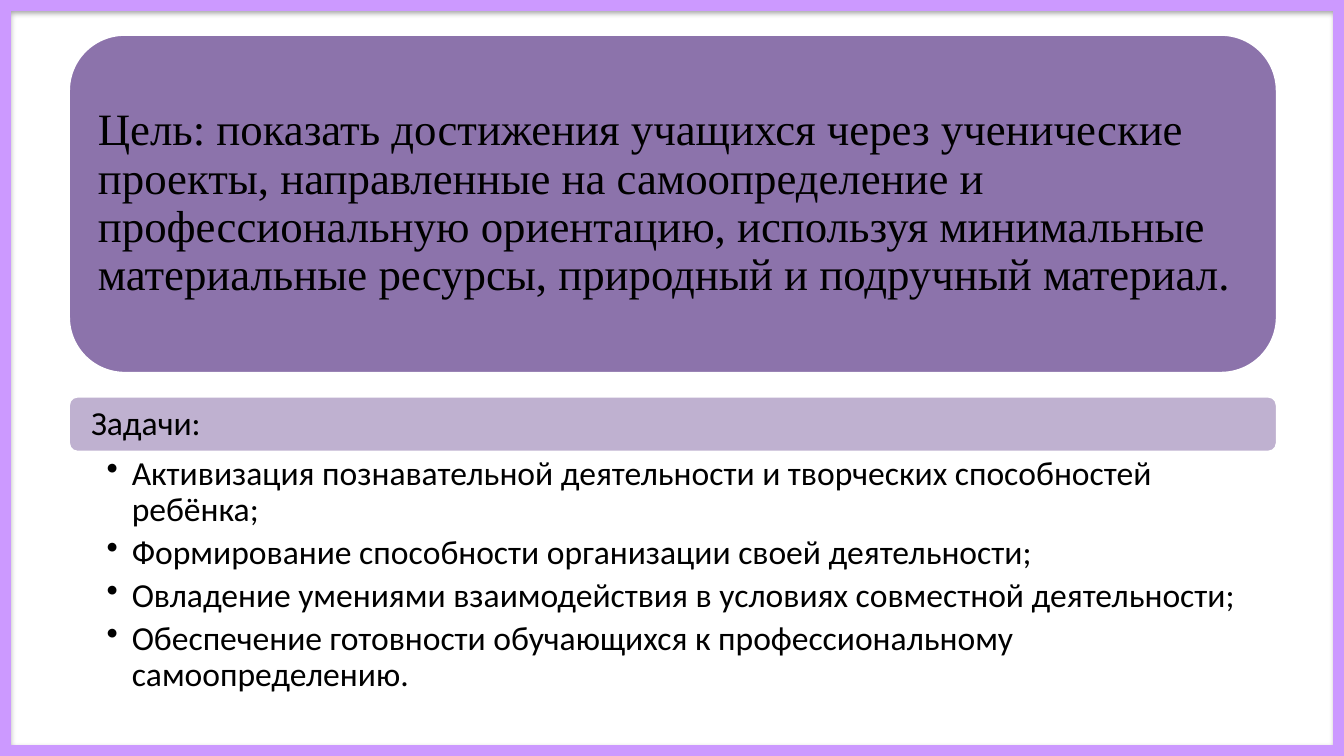
from dataclasses import dataclass

from pptx import Presentation
from pptx.dml.color import RGBColor
from pptx.enum.shapes import MSO_SHAPE
from pptx.enum.text import MSO_ANCHOR, PP_ALIGN
from pptx.oxml.ns import qn
from pptx.util import Pt
from lxml.etree import SubElement


@dataclass(frozen=True)
class Theme:
    edge: RGBColor = RGBColor(0xCC, 0x99, 0xFF)
    card: RGBColor = RGBColor(0x80, 0x64, 0xA2)
    rim: RGBColor = RGBColor(0xFF, 0xFF, 0xFF)
    ink: RGBColor = RGBColor(0, 0, 0)
    serif: str = "Times New Roman"
    sans: str = "Calibri"
    large: int = 24
    small: int = 18


@dataclass(frozen=True)
class Frame:
    adj: float
    line: float
    shade: bool


@dataclass(frozen=True)
class Card:
    top: float
    height: float
    alpha: int
    inset: float
    text: str
    font: str
    size: int


THEME = Theme()
WIDE, HIGH = 720, 405
LEFT, SPAN = 36.5, 648

FRAMES = [Frame(0.013, 0.75, True), Frame(0.012, 2, False)]

CARDS = [
    Card(18.2, 182, 90, 7.2,
         "Цель: показать достижения учащихся через ученические проекты, "
         "направленные на самоопределение и профессиональную ориентацию, "
         "используя минимальные материальные ресурсы, природный и подручный "
         "материал.", THEME.serif, THEME.large),
    Card(212, 30.5, 50, 10.8, "Задачи:", THEME.sans, THEME.small),
]

TASKS = [
    "Активизация познавательной деятельности и творческих способностей ребёнка;",
    "Формирование способности организации своей деятельности;",
    "Овладение умениями взаимодействия в условиях совместной деятельности;",
    "Обеспечение готовности обучающихся к профессиональному самоопределению.",
]


def add_form(slide, kind, box: tuple, fill: RGBColor, rim: RGBColor,
             line: float):
    form = slide.shapes.add_shape(kind, *map(Pt, box))
    form.shadow.inherit = False
    form.fill.solid()
    form.fill.fore_color.rgb = fill
    form.line.color.rgb = rim
    form.line.width = Pt(line)
    return form


def add_run(para, text: str, font: str, size: int) -> None:
    para.alignment = PP_ALIGN.LEFT
    para.line_spacing = 0.9
    run = para.add_run()
    run.text = text
    run.font.name = font
    run.font.size = Pt(size)
    run.font.color.rgb = THEME.ink


def set_pad(body, left: float, top: float, right: float) -> None:
    body.word_wrap = True
    body.margin_left, body.margin_right = Pt(left), Pt(right)
    body.margin_top = body.margin_bottom = Pt(top)


def add_frame(slide, frame: Frame) -> None:
    form = add_form(slide, MSO_SHAPE.FRAME, (0, 0, WIDE, HIGH),
                    THEME.edge, THEME.edge, frame.line)
    form.adjustments[0] = frame.adj
    if frame.shade:
        glow = form.element.spPr.find(qn("a:effectLst"))
        cast = SubElement(glow, qn("a:outerShdw"), blurRad=str(Pt(3.1)),
                          dist=str(Pt(1.6)), dir="5400000", rotWithShape="0")
        tint = SubElement(cast, qn("a:srgbClr"), val=str(THEME.ink))
        SubElement(tint, qn("a:alpha"), val="38000")


def add_card(slide, card: Card) -> None:
    form = add_form(slide, MSO_SHAPE.ROUNDED_RECTANGLE,
                    (LEFT, card.top, SPAN, card.height),
                    THEME.card, THEME.rim, 2)
    tint = form.element.spPr.find(qn("a:solidFill"))[0]
    SubElement(tint, qn("a:alpha"), val=str(card.alpha * 1000))
    body = form.text_frame
    set_pad(body, card.inset, 0, card.inset)
    body.vertical_anchor = MSO_ANCHOR.MIDDLE
    add_run(body.paragraphs[0], card.text, card.font, card.size)


def add_list(slide, items: list[str]) -> None:
    box = slide.shapes.add_textbox(Pt(LEFT), Pt(242.2), Pt(SPAN), Pt(139))
    body = box.text_frame
    set_pad(body, 20.6, 2.2, 13)
    for i, item in enumerate(items):
        para = body.add_paragraph() if i else body.paragraphs[0]
        props = para._p.get_or_add_pPr()
        props.set("marL", str(Pt(13.5)))
        props.set("indent", str(-Pt(13.5)))
        SubElement(props, qn("a:buChar"), char="•")
        para.space_after = Pt(3.6)
        add_run(para, item, THEME.sans, THEME.small)


def main() -> None:
    deck = Presentation()
    deck.slide_width, deck.slide_height = Pt(WIDE), Pt(HIGH)
    slide = deck.slides.add_slide(deck.slide_layouts[6])

    # Border around the slide
    for frame in FRAMES:
        add_frame(slide, frame)

    # Goal and heading of the tasks
    for card in CARDS:
        add_card(slide, card)

    # Tasks
    add_list(slide, TASKS)
    deck.save("out.pptx")


if __name__ == "__main__":
    main()
